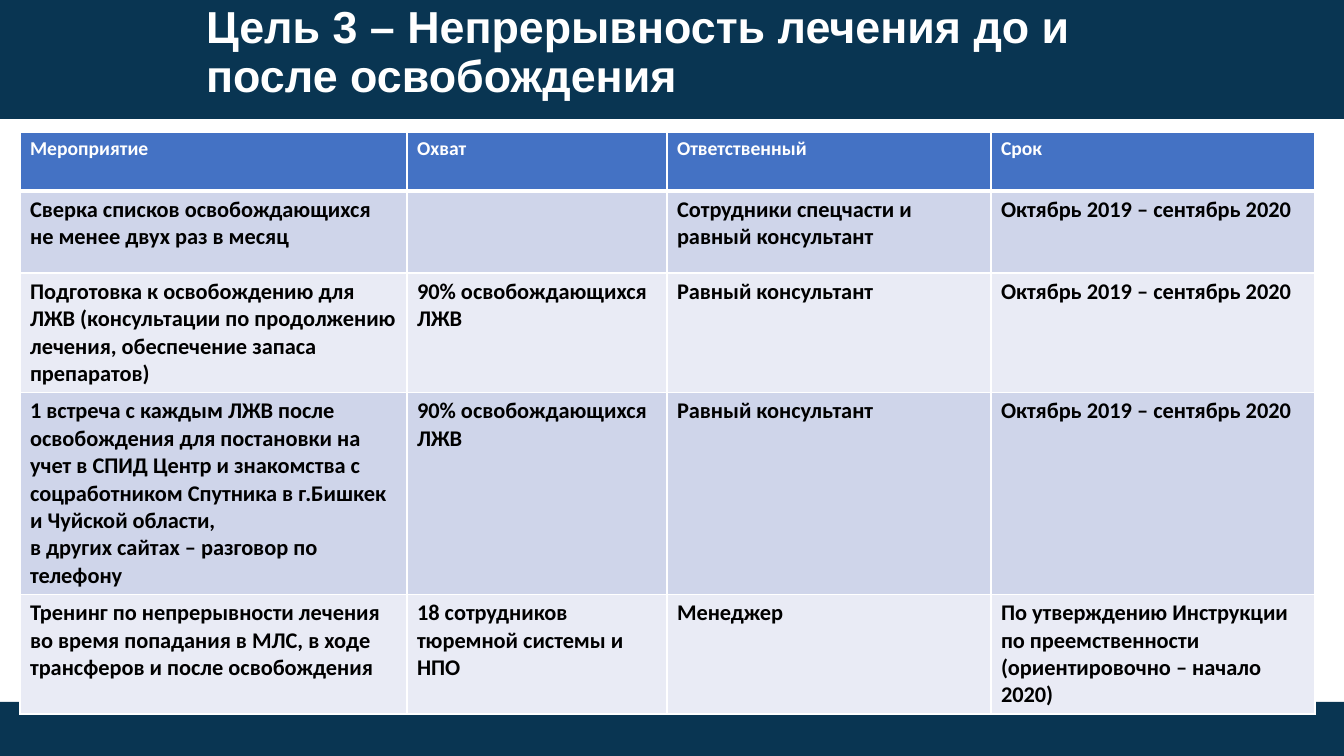
from dataclasses import dataclass

from lxml.etree import SubElement
from pptx import Presentation
from pptx.dml.color import RGBColor
from pptx.enum.shapes import MSO_SHAPE as Shape
from pptx.enum.text import MSO_ANCHOR as Anchor, MSO_AUTO_SIZE as AutoSize, PP_ALIGN as Align
from pptx.oxml.ns import qn
from pptx.util import Emu, Pt

SLIDE_W, SLIDE_H = 1344, 756
EMU_PER_PX = 12192000 / SLIDE_W

PERIOD = "Октябрь 2019 – сентябрь 2020"
RELEASED = "90% освобождающихся ЛЖВ"
PEER = "Равный консультант"
PLAN = [
    ["Мероприятие", "Охват", "Ответственный", "Срок"],
    ["Сверка списков освобождающихся не менее двух раз в месяц", "",
     "Сотрудники спецчасти и равный консультант", PERIOD],
    ["Подготовка к освобождению для ЛЖВ (консультации по продолжению лечения, "
     "обеспечение запаса препаратов)", RELEASED, PEER, PERIOD],
    ["1 встреча с каждым ЛЖВ после освобождения для постановки на учет в СПИД Центр "
     "и знакомства с соцработником Спутника в г.Бишкек и Чуйской области,\n"
     "в других сайтах – разговор по телефону", RELEASED, PEER, PERIOD],
    ["Тренинг по непрерывности лечения во время попадания в МЛС, в ходе трансферов "
     "и после освобождения", "18 сотрудников тюремной системы и НПО", "Менеджер",
     "По утверждению Инструкции по преемственности (ориентировочно – начало 2020)"],
]
PLAN_COLUMNS = [387, 260, 324, 324]
PLAN_ROWS = [59, 82, 117, 184, 117]


@dataclass(frozen=True)
class Theme:
    navy: str = "093552"
    white: str = "FFFFFF"
    black: str = "000000"
    header: str = "4472C4"
    bands: tuple = ("CFD5EA", "E9EBF5")
    title_font: str = "Arial"
    table_font: str = "Calibri"
    title_size: int = 32
    header_size: int = 14
    body_size: int = 16
    grid: int = 1
    header_rule: int = 3


def px(length):
    return Emu(round(length * EMU_PER_PX))


def paint(fill, color):
    fill.solid()
    fill.fore_color.rgb = RGBColor.from_string(color)


def draw_borders(cell, color, widths):
    """Widths are points in the order left, right, top, bottom."""
    properties = cell._tc.get_or_add_tcPr()
    for side, width in zip("LRTB", widths):
        line = SubElement(properties, qn(f"a:ln{side}"), w=str(Pt(width)))
        solid = SubElement(line, qn("a:solidFill"))
        SubElement(solid, qn("a:srgbClr"), val=color)


class SlideBuilder:
    def __init__(self, slide, theme):
        self.slide = slide
        self.theme = theme

    def add_text(self, paragraph, text, font, size, color):
        """Adds bold runs, with a line break at each newline."""
        for index, line in enumerate(text.split("\n")):
            if index:
                paragraph.add_line_break()
            run = paragraph.add_run()
            run.text = line
            run.font.name = font
            run.font.size = Pt(size)
            run.font.bold = True
            run.font.color.rgb = RGBColor.from_string(color)

    def band(self, top, height):
        band = self.slide.shapes.add_shape(
            Shape.RECTANGLE, 0, px(top), px(SLIDE_W), px(height))
        band.shadow.inherit = False
        paint(band.fill, self.theme.navy)
        band.line.fill.background()
        # Bands lie behind the title placeholder
        self.slide.shapes._spTree.insert(2, band._element)

    def title(self, text, left, top, width, height):
        title = self.slide.shapes.title
        title.left, title.top = px(left), px(top)
        title.width, title.height = px(width), px(height)
        frame = title.text_frame
        frame.word_wrap = True
        frame.auto_size = AutoSize.NONE
        frame.vertical_anchor = Anchor.TOP
        heading = frame.paragraphs[0]
        heading.alignment = Align.LEFT
        heading.line_spacing = 0.9
        self.add_text(heading, text, self.theme.title_font,
                      self.theme.title_size, self.theme.white)

    def table(self, rows, left, top, widths, heights):
        theme = self.theme
        table = self.slide.shapes.add_table(
            len(rows), len(widths), px(left), px(top),
            px(sum(widths)), px(sum(heights))).table
        table.horz_banding = False
        for column, width in zip(table.columns, widths):
            column.width = px(width)
        for index, (row, height) in enumerate(zip(table.rows, heights)):
            row.height = px(height)
            if index == 0:
                fill, size, color = theme.header, theme.header_size, theme.white
            else:
                fill = theme.bands[(index - 1) % 2]
                size, color = theme.body_size, theme.black
            above = theme.header_rule if index == 1 else theme.grid
            below = theme.header_rule if index == 0 else theme.grid
            for cell, text in zip(row.cells, rows[index]):
                draw_borders(cell, theme.white, (theme.grid, theme.grid, above, below))
                paint(cell.fill, fill)
                if text:
                    self.add_text(cell.text_frame.paragraphs[0], text,
                                  theme.table_font, size, color)


def main():
    deck = Presentation()
    deck.slide_width, deck.slide_height = px(SLIDE_W), px(SLIDE_H)
    title_only = deck.slide_layouts[5]
    builder = SlideBuilder(deck.slides.add_slide(title_only), Theme())
    builder.band(0, 119)
    builder.band(702, SLIDE_H - 702)
    builder.title("Цель 3 – Непрерывность лечения до и после освобождения",
                  196, 0, 952, 126)
    builder.table(PLAN, 20, 132, PLAN_COLUMNS, PLAN_ROWS)
    deck.save("out.pptx")


if __name__ == "__main__":
    main()
